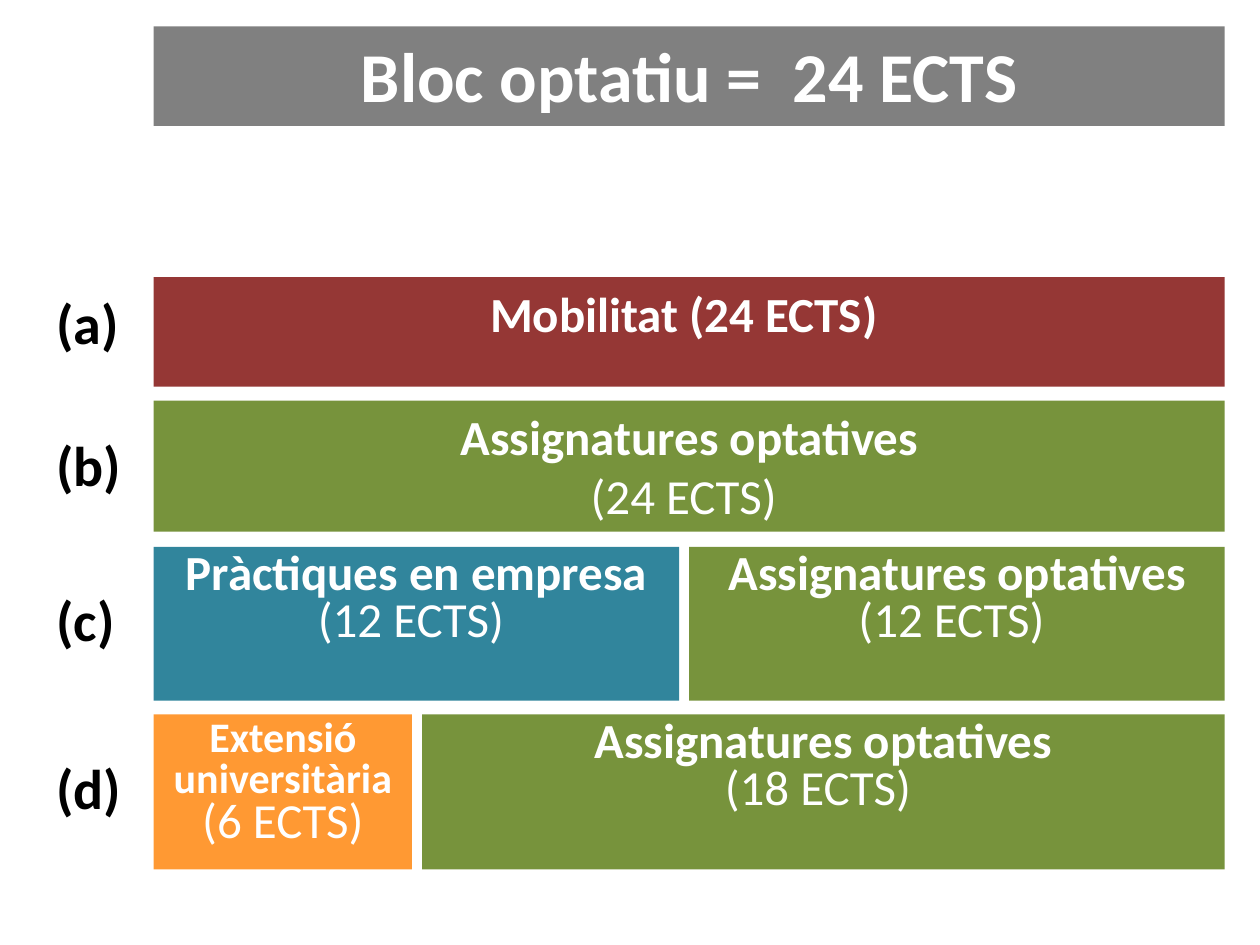
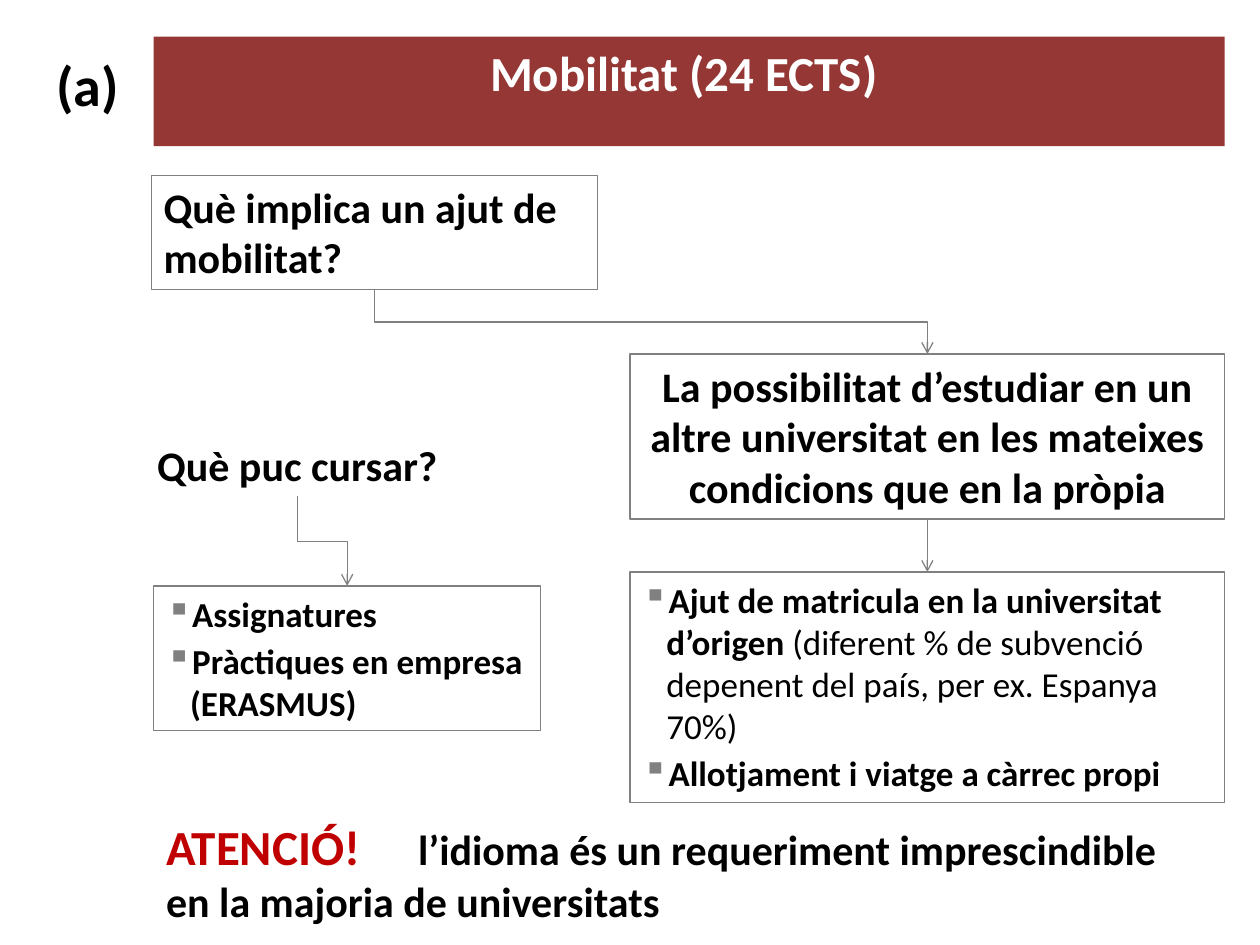
"""Builds two slides on the optional 24 ECTS block and the mobility option."""
from dataclasses import dataclass
from typing import NamedTuple, Optional

from lxml.etree import SubElement
from pptx import Presentation
from pptx.dml.color import RGBColor
from pptx.enum.shapes import MSO_CONNECTOR, MSO_SHAPE
from pptx.enum.text import MSO_ANCHOR, PP_ALIGN
from pptx.oxml.ns import qn
from pptx.util import Inches, Pt

COLORS = {
    "white": "FFFFFF", "black": "000000", "gray": "808080", "mobility": "953735",
    "subjects": "77933C", "company": "31859C", "extension": "FF9933", "alert": "C00000",
}
FONT = "Calibri"
WIDTH, HEIGHT = Inches(10), Inches(7.5)
COLUMNS, ROWS = 100, 75
BAR_LEFT, BAR_WIDTH, BAR_GAP = 12.2, 85, 0.8
BAR_HEIGHT = 8.7
LABEL_LEFT, LABEL_HEIGHT = 3.5, 6.4
RIGHT_LEFT, RIGHT_WIDTH = 50, 47.2


class Cell(NamedTuple):
    left: float
    top: float
    width: float
    height: float


class Run(NamedTuple):
    text: str
    bold: bool = True
    size: Optional[float] = None
    color: Optional[str] = None


BREAK = Run("\n")


@dataclass
class Block:
    fill: str
    paras: list
    width: Optional[float] = None


@dataclass
class Option:
    label: str
    label_top: float
    label_width: float
    top: float
    height: float
    blocks: list
    spacing: Optional[float] = None


def subjects(credits: int) -> Block:
    return Block("subjects", [[Run("Assignatures optatives")], [Run(f"({credits} ECTS) ", False)]])


def mobility(top: float, label_top: float) -> Option:
    return Option("(a)", label_top, 7, top, BAR_HEIGHT,
                  [Block("mobility", [[Run("Mobilitat (24 ECTS) ")]])])


OPTIONS = [
    mobility(22, 22.4),
    Option("(b)", 33.7, 7.2, 31.8, 10.4, [subjects(24)]),
    Option("(c)", 46, 6.7, 43.4, 12.2, [
        Block("company", [[Run("Pràctiques en empresa")], [Run("(12 ECTS) ", False)]], 41.7),
        subjects(12)], 0.8),
    Option("(d)", 59.3, 7.2, 56.7, 12.3, [
        Block("extension", [[Run("Extensió universitària ", size=24), Run("(6 ECTS)", False)]], 20.5),
        subjects(18)], 0.8),
]


def rgb(name: str) -> RGBColor:
    return RGBColor.from_string(COLORS[name])


def place(cell: Cell) -> tuple:
    return (int(WIDTH * cell.left / COLUMNS), int(HEIGHT * cell.top / ROWS),
            int(WIDTH * cell.width / COLUMNS), int(HEIGHT * cell.height / ROWS))


def add_bullet(p) -> None:
    p.space_after = Pt(3)
    pPr = p._p.get_or_add_pPr()
    pPr.set("marL", str(Inches(0.19)))
    pPr.set("indent", str(-Inches(0.19)))
    clr = SubElement(pPr, qn("a:buClr"))
    SubElement(clr, qn("a:srgbClr"), val=COLORS["gray"])
    SubElement(pPr, qn("a:buChar"), char="▪")


def write(sp, paras: list, size: float = 24, color: str = "black", align=PP_ALIGN.LEFT,
          spacing: Optional[float] = None, bullet: bool = False, wrap: bool = True) -> None:
    tf = sp.text_frame
    tf.word_wrap = wrap
    tf.vertical_anchor = MSO_ANCHOR.TOP
    for i, runs in enumerate(paras):
        p = tf.add_paragraph() if i else tf.paragraphs[0]
        p.alignment = align
        if spacing:
            p.line_spacing = spacing
        if bullet:
            add_bullet(p)
        for run in runs:
            if run is BREAK:
                p.add_line_break()
                continue
            r = p.add_run()
            r.text = run.text
            r.font.name = FONT
            r.font.size = Pt(run.size or size)
            r.font.bold = run.bold
            r.font.color.rgb = rgb(run.color or color)


def add_rect(s, cell: Cell, paras: list, fill: Optional[str] = None, **fmt):
    sp = s.shapes.add_shape(MSO_SHAPE.RECTANGLE, *place(cell))
    sp.shadow.inherit = False
    if fill:
        sp.fill.solid()
        sp.fill.fore_color.rgb = rgb(fill)
        sp.line.fill.background()
    else:
        sp.fill.background()
        sp.line.color.rgb = rgb("gray")
        sp.line.width = Pt(0.75)
    write(sp, paras, **fmt)
    return sp


def add_text(s, cell: Cell, paras: list, **fmt):
    sp = s.shapes.add_textbox(*place(cell))
    write(sp, paras, **fmt)
    return sp


def add_bar(s, cell: Cell, paras: list, fill: str, size: float = 28,
            spacing: Optional[float] = None) -> None:
    add_rect(s, cell, paras, fill, size=size, color="white", align=PP_ALIGN.CENTER, spacing=spacing)


def add_option(s, option: Option) -> None:
    left, end = BAR_LEFT, BAR_LEFT + BAR_WIDTH
    for block in option.blocks:
        width = block.width or end - left
        add_bar(s, Cell(left, option.top, width, option.height), block.paras, block.fill,
                spacing=option.spacing)
        left += width + BAR_GAP
    add_text(s, Cell(LABEL_LEFT, option.label_top, option.label_width, LABEL_HEIGHT),
             [[Run(option.label)]], size=32, wrap=False)


def add_arrow(s, source, target) -> None:
    x1, y1 = source.left + source.width // 2, source.top + source.height
    x2, y2 = target.left + target.width // 2, target.top
    bent = x1 != x2
    kind = MSO_CONNECTOR.ELBOW if bent else MSO_CONNECTOR.STRAIGHT
    cn = s.shapes.add_connector(kind, x1, y1, x2, y2)
    cn.begin_connect(source, 2)
    cn.end_connect(target, 0)
    if bent:
        dx, dy = x2 - x1, y2 - y1
        cn.left, cn.top = (x1 + x2 - dy) // 2, (y1 + y2 - dx) // 2
        cn.width, cn.height = dy, dx
        xfrm = cn._element.spPr.find(qn("a:xfrm"))
        xfrm.set("rot", str(270 * 60000))
        xfrm.set("flipH", "1")
    cn.line.color.rgb = rgb("gray")
    cn.line.width = Pt(0.75)
    SubElement(cn.line._get_or_add_ln(), qn("a:tailEnd"), type="arrow")
    SubElement(cn._element.spPr, qn("a:effectLst"))


def build_overview(s) -> None:
    add_bar(s, Cell(BAR_LEFT, 2.1, BAR_WIDTH, 7.9), [[Run("Bloc optatiu =  24 ECTS")]],
            "gray", size=40)
    for option in OPTIONS:
        add_option(s, option)


def build_mobility(s) -> None:
    add_option(s, mobility(2.9, 3.5))
    question = add_rect(s, Cell(12, 13.9, 35.4, 9.1), [[Run("Què implica un ajut de mobilitat?")]])
    answer = add_rect(s, Cell(RIGHT_LEFT, 28.1, RIGHT_WIDTH, 13.1), [[Run(
        "La possibilitat d’estudiar en un altre universitat en les mateixes "
        "condicions que en la pròpia")]], align=PP_ALIGN.CENTER)
    funding = add_rect(s, Cell(RIGHT_LEFT, 45.4, RIGHT_WIDTH, 18.3), [
        [Run("Ajut de matricula en la universitat d’origen "),
         Run("(diferent % de subvenció depenent del país, per ex. Espanya 70%)", False)],
        [Run("Allotjament i viatge a càrrec propi")]], size=20, bullet=True)
    courses = add_text(s, Cell(9.8, 34.4, 27.6, 5), [[Run("Què puc cursar?")]],
                       align=PP_ALIGN.CENTER)
    choices = add_rect(s, Cell(BAR_LEFT, 46.5, 30.7, 11.5), [
        [Run("Assignatures")], [Run("Pràctiques en empresa (ERASMUS)")]], size=20, bullet=True)
    for source, target in ((question, answer), (answer, funding), (courses, choices)):
        add_arrow(s, source, target)
    add_text(s, Cell(BAR_LEFT, 64.3, BAR_WIDTH, 9.8), [[
        Run("ATENCIÓ!", size=28, color="alert"),
        Run("\tl’idioma és un requeriment imprescindible"), BREAK,
        Run("en la majoria de universitats")]])


def main() -> None:
    prs = Presentation()
    prs.slide_width, prs.slide_height = WIDTH, HEIGHT
    for build in (build_overview, build_mobility):
        build(prs.slides.add_slide(prs.slide_layouts[6]))
    prs.save("out.pptx")


if __name__ == "__main__":
    main()
